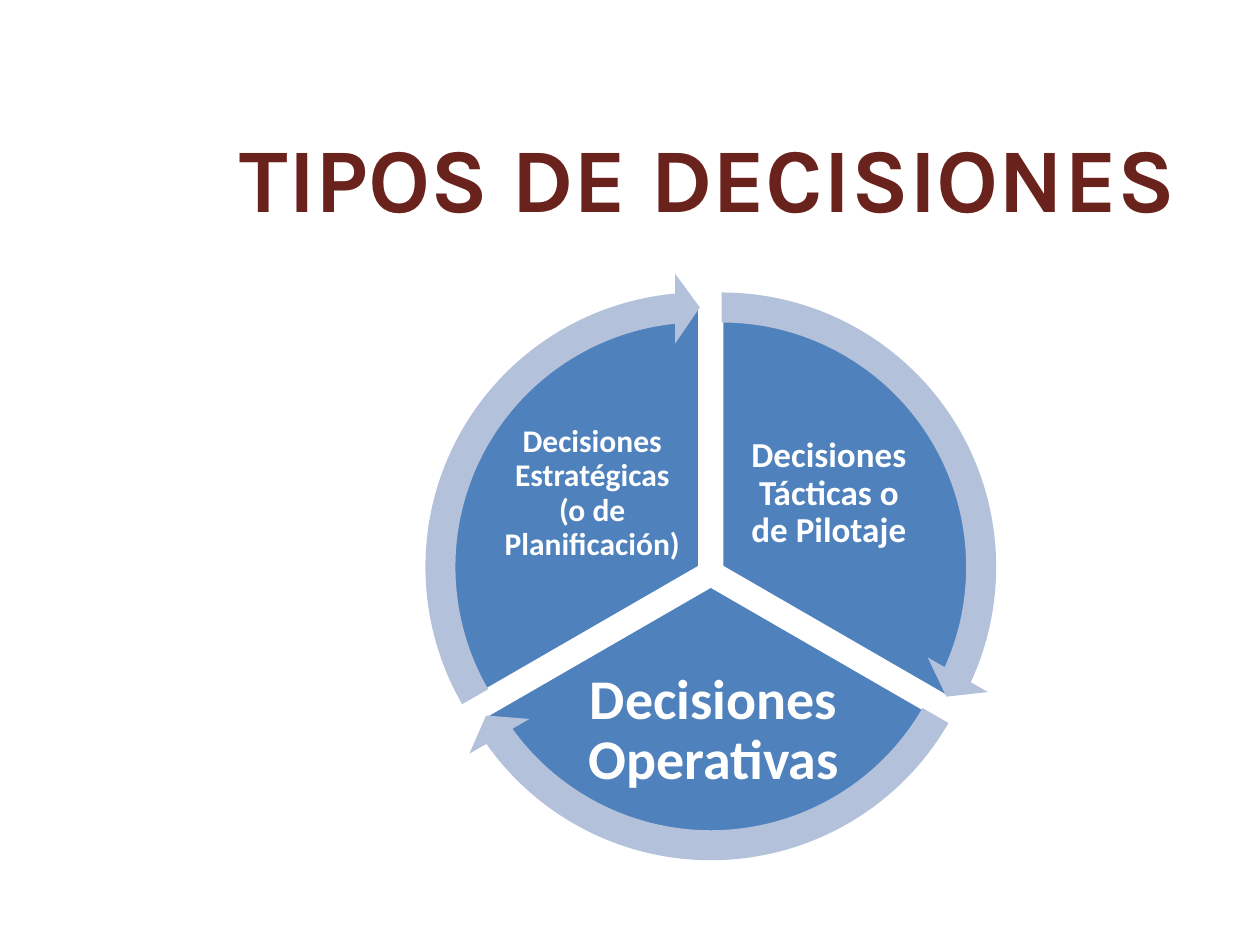
import pptx
import pptx.util
import pptx.dml.color
import pptx.enum.shapes
import pptx.enum.text

Cm = pptx.util.Cm
Pt = pptx.util.Pt
RGBColor = pptx.dml.color.RGBColor
MSO_SHAPE = pptx.enum.shapes.MSO_SHAPE
PP_ALIGN = pptx.enum.text.PP_ALIGN
MSO_ANCHOR = pptx.enum.text.MSO_ANCHOR

MAROON = RGBColor(0x6A, 0x22, 0x1D)
BLUE = RGBColor(0x4F, 0x81, 0xBD)
PALE_BLUE = RGBColor(0xB3, 0xC1, 0xDB)
WHITE = RGBColor(0xFF, 0xFF, 0xFF)

PIE_SIZE = 10.57
ARROW_SIZE = 11.86
# Angle adjustments count 0.6 per degree: 216 is a full turn
FULL_TURN = 216
THIRD = FULL_TURN / 3
TOP = 162
ARROW_HEAD = 3.275

# Text, size in points, sector centre, text box (left, top, width, height) in cm
SECTORS = [
    ("Decisiones Tácticas o de Pilotaje", 20, (14.55, 11.43),
     (14.83, 8.38, 3.76, 3.15)),
    ("Decisiones Operativas", 32, (14.33, 11.81),
     (11.56, 13.36, 5.66, 2.77)),
    ("Decisiones Estratégicas (o de Planificación)", 18, (14.11, 11.43),
     (10.06, 8.38, 3.76, 3.15)),
]


def add_run(p, text, font, size, color):
    r = p.add_run()
    r.text = text
    r.font.name = font
    r.font.size = Pt(size)
    r.font.bold = True
    r.font.color.rgb = color


def set_title(slide, text):
    sp = slide.shapes.title
    sp.left, sp.top, sp.width, sp.height = Cm(2.9), Cm(1.96), Cm(21.89), Cm(3.18)
    tf = sp.text_frame
    tf.vertical_anchor = MSO_ANCHOR.MIDDLE
    tf.margin_left = Cm(1.1)
    p = tf.paragraphs[0]
    p.alignment = PP_ALIGN.CENTER
    add_run(p, text, "Karla", 52, MAROON)


def add_round_shape(slide, kind, center, size, color, adjustments):
    x, y = center
    sp = slide.shapes.add_shape(kind, Cm(x - size / 2), Cm(y - size / 2),
                                Cm(size), Cm(size))
    for i, value in enumerate(adjustments):
        sp.adjustments[i] = value
    sp.shadow.inherit = False
    sp.fill.solid()
    sp.fill.fore_color.rgb = color
    sp.line.fill.background()
    return sp


def add_sector(slide, center, start, end):
    sp = add_round_shape(slide, MSO_SHAPE.PIE, center, PIE_SIZE, BLUE, (start, end))
    sp.line.color.rgb = WHITE
    sp.line.width = Pt(2)


def add_arrow(slide, center, start):
    tip = (start + THIRD - ARROW_HEAD) % FULL_TURN
    add_round_shape(slide, MSO_SHAPE.CIRCULAR_ARROW, center, ARROW_SIZE, PALE_BLUE,
                    (0.051, ARROW_HEAD, tip, start, 0.059))


def add_label(slide, text, size, box):
    tf = slide.shapes.add_textbox(*(Cm(v) for v in box)).text_frame
    tf.word_wrap = True
    tf.vertical_anchor = MSO_ANCHOR.MIDDLE
    tf.margin_left = tf.margin_right = tf.margin_top = tf.margin_bottom = Cm(0.08)
    p = tf.paragraphs[0]
    p.alignment = PP_ALIGN.CENTER
    p.line_spacing = 0.9
    add_run(p, text, "Calibri", size, WHITE)


def main():
    prs = pptx.Presentation()
    prs.slide_width, prs.slide_height = Cm(25.4), Cm(19.05)
    slide = prs.slides.add_slide(prs.slide_layouts[5])
    set_title(slide, "TIPOS DE DECISIONES")

    # Sectors with their labels, clockwise from the top
    starts = [(TOP + i * THIRD) % FULL_TURN for i in range(len(SECTORS))]
    for start, (text, size, center, box) in zip(starts, SECTORS):
        add_sector(slide, center, start, (start + THIRD) % FULL_TURN)
        add_label(slide, text, size, box)

    # Cycle arrows around the sectors
    for start, (_, _, center, _) in zip(starts, SECTORS):
        add_arrow(slide, center, start)

    prs.save("out.pptx")


if __name__ == "__main__":
    main()
